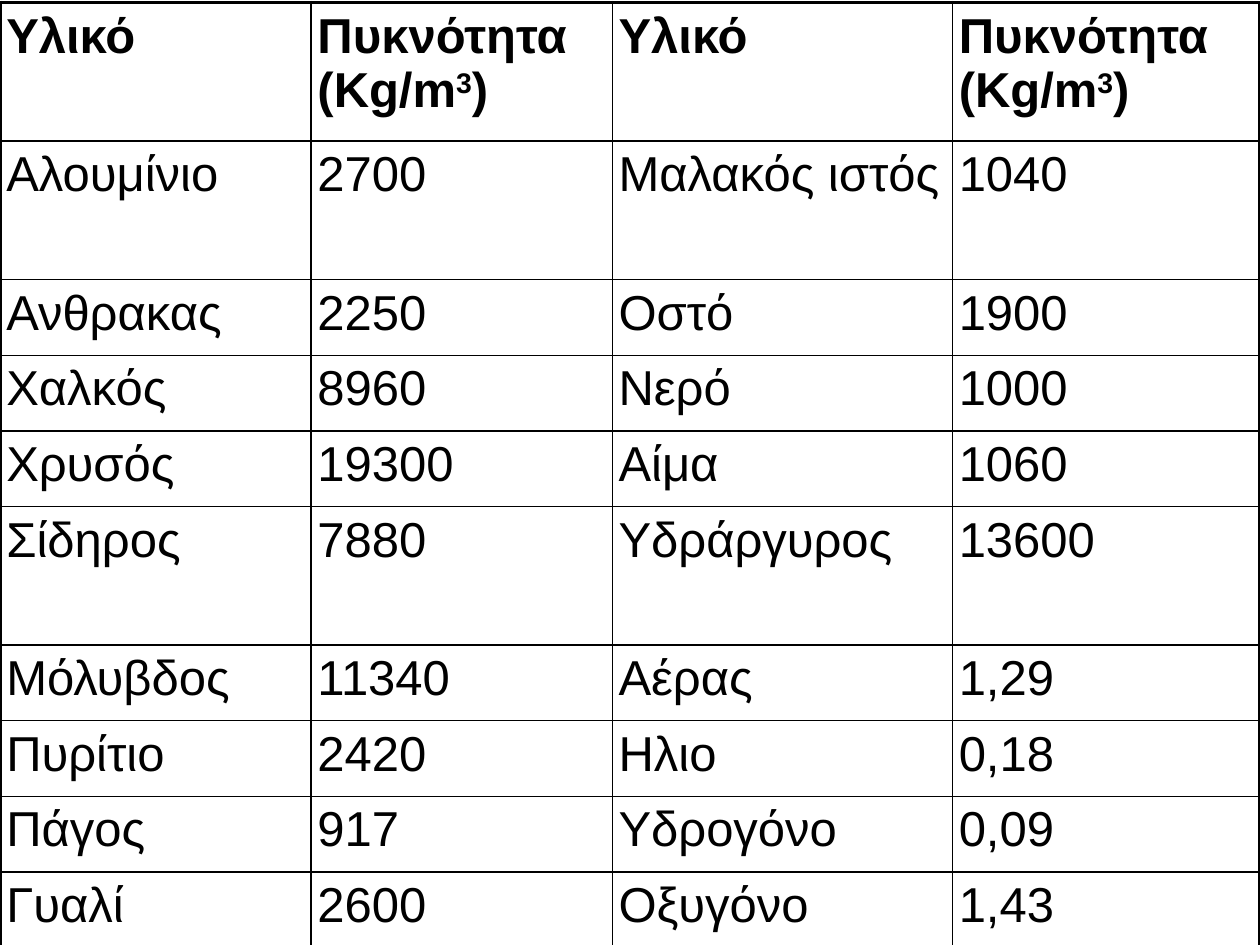
from dataclasses import dataclass

from lxml import etree
from pptx import Presentation
from pptx import util as u
from pptx.dml.color import RGBColor
from pptx.oxml import ns

INK = "000000"
THIN, THICK = 1, 2.25
COLS = [2.47, 2.39, 2.7, 2.44]
TALL, LOW = 1.1, 0.6


@dataclass
class Piece:
    text: str
    sup: bool = False


@dataclass
class Row:
    cells: list
    high: float = LOW
    bold: bool = False


UNIT = [Piece("Πυκνότητα (Kg/m"), Piece("3", sup=True), Piece(")")]
HEAD = [[Piece("Υλικό")], UNIT] * 2

# Material and density, twice per row
DATA = [
    ("Αλουμίνιο", "2700", "Μαλακός ιστός", "1040"),
    ("Ανθρακας", "2250", "Οστό", "1900"),
    ("Χαλκός", "8960", "Νερό", "1000"),
    ("Χρυσός", "19300", "Αίμα", "1060"),
    ("Σίδηρος", "7880", "Υδράργυρος", "13600"),
    ("Μόλυβδος", "11340", "Αέρας", "1,29"),
    ("Πυρίτιο", "2420", "Ηλιο", "0,18"),
    ("Πάγος", "917", "Υδρογόνο", "0,09"),
    ("Γυαλί", "2600", "Οξυγόνο", "1,43"),
]
ROOMY = ("Αλουμίνιο", "Σίδηρος")

ROWS = [Row(HEAD, TALL, bold=True)] + [
    Row([[Piece(word)] for word in line], TALL if line[0] in ROOMY else LOW)
    for line in DATA
]


def color(code: str) -> RGBColor:
    return RGBColor.from_string(code)


def add_edge(cell, side: str, width: float) -> None:
    props = cell._tc.get_or_add_tcPr()
    line = etree.SubElement(props, ns.qn(f"a:ln{side}"), w=str(u.Pt(width)))
    fill = etree.SubElement(line, ns.qn("a:solidFill"))
    etree.SubElement(fill, ns.qn("a:srgbClr"), val=INK)


def add_text(cell, pieces: list, bold: bool) -> None:
    para = cell.text_frame.paragraphs[0]
    para.space_before = u.Pt(6)
    for piece in pieces:
        run = para.add_run()
        run.text = piece.text
        font = run.font
        font.name, font.size, font.bold = "Arial", u.Pt(28), bold
        font.color.rgb = color(INK)
        if piece.sup:
            run._r.get_or_add_rPr().set("baseline", "30000")


def style_cell(cell, row: int, col: int) -> None:
    cell.margin_left = cell.margin_right = u.Inches(0.05)
    cell.margin_top = cell.margin_bottom = u.Inches(0.05)
    # Outer edges are thick, inner ones thin
    outer = {
        "L": col == 0,
        "R": col == len(COLS) - 1,
        "T": row == 0,
        "B": row == len(ROWS) - 1,
    }
    for side, thick in outer.items():
        add_edge(cell, side, THICK if thick else THIN)
    cell.fill.background()


def add_grid(slide) -> None:
    frame = slide.shapes.add_table(
        len(ROWS), len(COLS), u.Inches(0), u.Inches(0.02),
        u.Inches(sum(COLS)), u.Inches(sum(row.high for row in ROWS)))
    table = frame.table
    table.first_row = table.horz_banding = False
    for col, wide in enumerate(COLS):
        table.columns[col].width = u.Inches(wide)
    for r, row in enumerate(ROWS):
        table.rows[r].height = u.Inches(row.high)
        for c, pieces in enumerate(row.cells):
            cell = table.cell(r, c)
            style_cell(cell, r, c)
            add_text(cell, pieces, row.bold)


def main() -> None:
    deck = Presentation()
    deck.slide_width, deck.slide_height = u.Inches(10), u.Inches(7.5)
    # The table fills the slide, so the blank layout serves
    slide = deck.slides.add_slide(deck.slide_layouts[6])
    add_grid(slide)
    deck.save("out.pptx")


if __name__ == "__main__":
    main()
